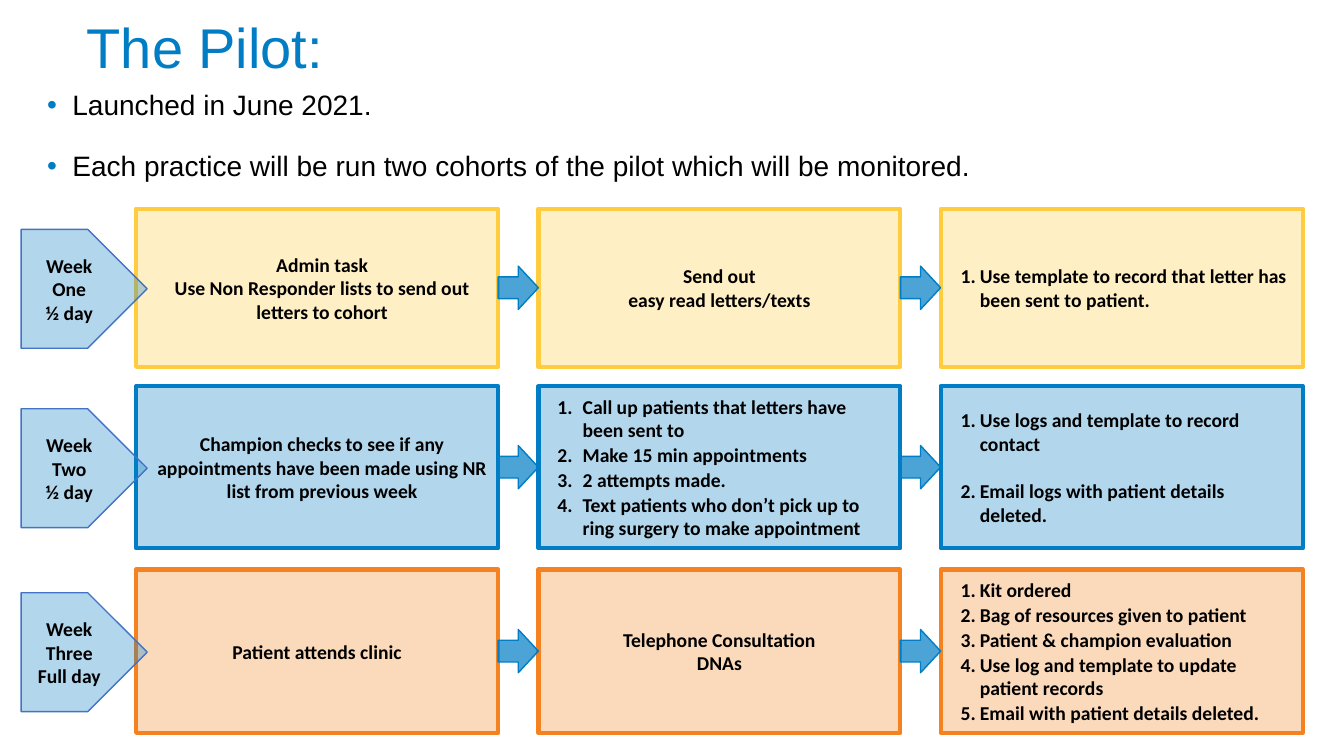
import pptx
import pptx.dml.color
import pptx.enum.shapes
import pptx.enum.text
import pptx.util
from lxml import etree

INCH = pptx.util.Inches
POINT = pptx.util.Pt
SHAPE = pptx.enum.shapes.MSO_SHAPE
ALIGN = pptx.enum.text.PP_ALIGN
ANCHOR = pptx.enum.text.MSO_ANCHOR
NAMESPACE = "{http://schemas.openxmlformats.org/drawingml/2006/main}"
BLUE, YELLOW, ORANGE = "007DC5", "FFCC40", "F58220"


def colour(value):
    return pptx.dml.color.RGBColor.from_string(value)


def add_block(page, kind, place, fill, opacity, line, width):
    block = page.shapes.add_shape(kind, *map(INCH, place))
    block.shadow.inherit = False
    block.fill.solid()
    block.fill.fore_color.rgb = colour(fill)
    tint = block.fill._xPr.find(f"{NAMESPACE}solidFill")[0]
    etree.SubElement(tint, f"{NAMESPACE}alpha", val=str(opacity * 1000))
    block.line.color.rgb = colour(line)
    block.line.width = POINT(width)
    block.text_frame.word_wrap = True
    block.text_frame.vertical_anchor = ANCHOR.MIDDLE
    return block


def write(frame, lines, style, margin=0, hang=0, gap=0, align=ALIGN.LEFT, marks=()):
    for index, line in enumerate(lines):
        para = frame.paragraphs[0] if index == 0 else frame.add_paragraph()
        para.alignment = align
        para.space_before = POINT(gap if index else 0)
        properties = para._p.get_or_add_pPr()
        properties.set("marL", str(INCH(margin)))
        properties.set("indent", str(-INCH(hang)))
        for mark in marks:
            properties.append(etree.fromstring(mark))
        span = para.add_run()
        span.text = line
        for name, value in style.items():
            setattr(span.font, name, value)
        span.font.color.rgb = colour("000000")


deck = pptx.Presentation()
deck.slide_width, deck.slide_height = INCH(13.33), INCH(7.5)
page = deck.slides.add_slide(deck.slide_layouts[5])

title = page.shapes.title
title.left, title.top, title.width, title.height = map(INCH, (0.78, 0.04, 8.58, 0.83))
frame = title.text_frame
frame.auto_size = pptx.enum.text.MSO_AUTO_SIZE.NONE
frame.vertical_anchor = ANCHOR.BOTTOM
frame.margin_left = frame.margin_right = frame.margin_top = frame.margin_bottom = INCH(0.08)
write(frame, ["The Pilot:"], {"name": "Arial", "size": POINT(40)})
frame.paragraphs[0].runs[0].font.color.rgb = colour(BLUE)

XMLNS = f'xmlns:a="{NAMESPACE[1:-1]}"'
BULLET = [
    f'<a:buClr {XMLNS}><a:srgbClr val="{BLUE}"/></a:buClr>',
    f'<a:buFont {XMLNS} typeface="Arial"/>',
    f'<a:buChar {XMLNS} char="•"/>',
]
NUMBER = [
    f'<a:buFont {XMLNS} typeface="+mj-lt"/>',
    f'<a:buAutoNum {XMLNS} type="arabicPeriod"/>',
]

intro = page.shapes.add_textbox(*map(INCH, (0.37, 0.86, 12.6, 1.02)))
intro.text_frame.word_wrap = True
write(
    intro.text_frame,
    ["Launched in June 2021.", "Each practice will be run two cohorts of the pilot which will be monitored."],
    {"name": "Arial", "size": POINT(20)}, margin=0.25, hang=0.25, gap=22, marks=BULLET,
)
for para in intro.text_frame.paragraphs:
    para.line_spacing = 0.9

CENTRED = {"align": ALIGN.CENTER}
INSET = {"align": ALIGN.CENTER, "margin": 0.1}
NARROW = {"margin": 0.29, "hang": 0.19, "gap": 1, "marks": NUMBER}
WIDE = {"margin": 0.34, "hang": 0.25, "gap": 1, "marks": NUMBER}
SPACED = {**NARROW, "gap": 17}
LABEL = {"name": "Calibri", "size": POINT(14), "bold": True}

weeks = [
    (2.07, 1.57, YELLOW, ["Week One", "½ day"], [
        (INSET, ["Admin task", "Use Non Responder lists to send out letters to cohort"]),
        (CENTRED, ["Send out", "easy read letters/texts"]),
        (NARROW, ["Use template to record that letter has been sent to patient."]),
    ]),
    (3.83, 1.61, BLUE, ["Week Two", "½ day"], [
        (INSET, ["Champion checks to see if any appointments have been made using NR list from previous week"]),
        (WIDE, ["Call up patients that letters have been sent to", "Make 15 min appointments",
                "2 attempts made.", "Text patients who don’t pick up to ring surgery to make appointment"]),
        (SPACED, ["Use logs and template to record contact", "Email logs with patient details deleted."]),
    ]),
    (5.65, 1.62, ORANGE, ["Week Three", "Full day"], [
        (CENTRED, ["Patient attends clinic"]),
        (CENTRED, ["Telephone Consultation", "DNAs"]),
        (NARROW, ["Kit ordered", "Bag of resources given to patient", "Patient & champion evaluation",
                  "Use log and template to update patient records", "Email with patient details deleted."]),
    ]),
]
LEFT, PITCH, GAP = 1.35, 3.99, 0.4
STEP_WIDTH = PITCH - GAP
WEEK_HEIGHT, ARROW_HEIGHT = 1.18, 0.43

for top, height, tone, week, steps in weeks:
    middle = top + height / 2
    for column, (layout, lines) in enumerate(steps):
        left = LEFT + column * PITCH
        step = add_block(page, SHAPE.RECTANGLE, (left, top, STEP_WIDTH, height), tone, 30, tone, 3)
        write(step.text_frame, lines, LABEL, **layout)
        if column:
            place = (left - GAP, middle - ARROW_HEIGHT / 2, GAP, ARROW_HEIGHT)
            add_block(page, SHAPE.RIGHT_ARROW, place, BLUE, 70, BLUE, 1)
    place = (0.21, middle + 0.01 - WEEK_HEIGHT / 2, 1.25, WEEK_HEIGHT)
    marker = add_block(page, SHAPE.PENTAGON, place, BLUE, 30, "4472C4", 1)
    write(marker.text_frame, week, LABEL, **CENTRED)

deck.save("out.pptx")
